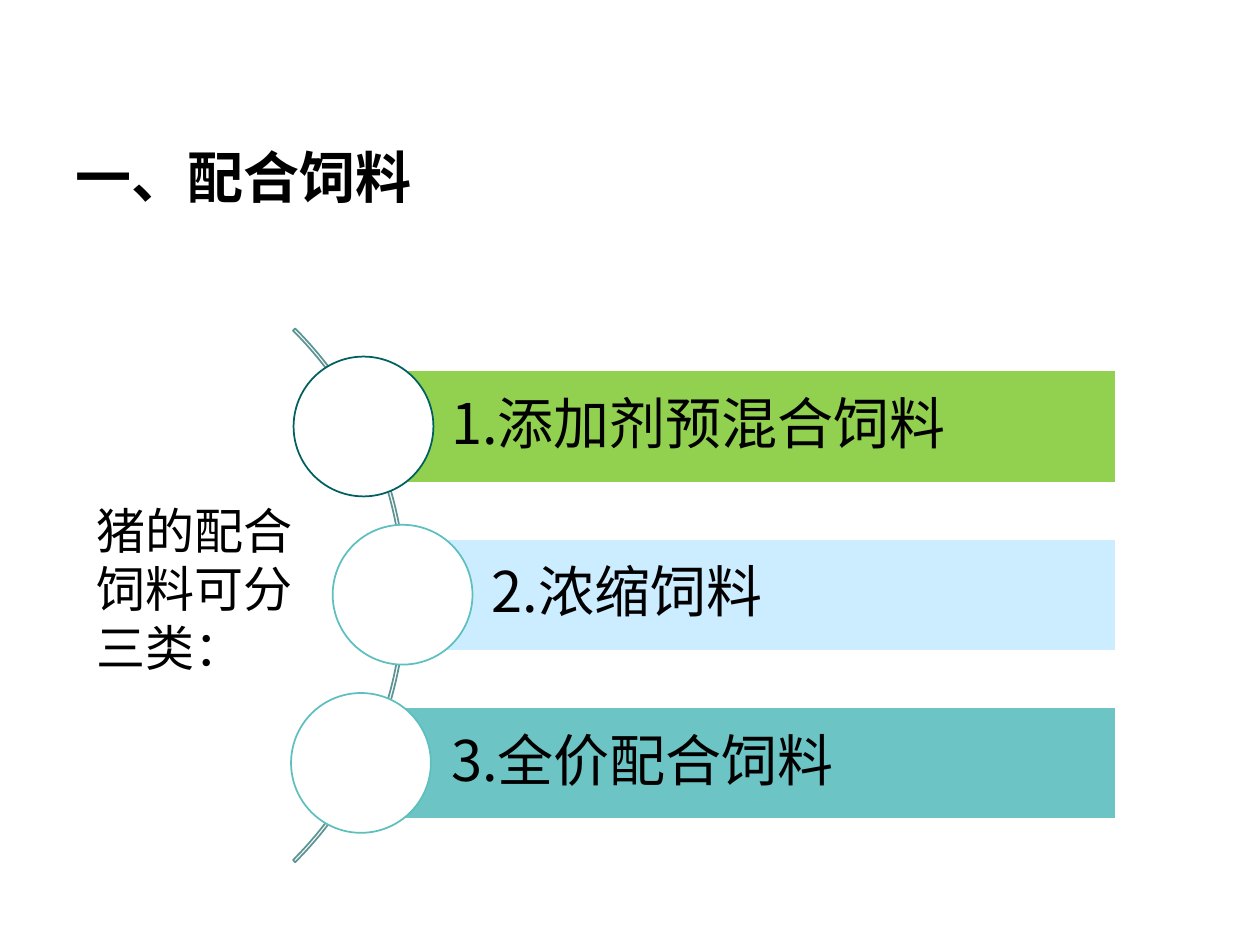
from lxml import etree
from pptx import Presentation
from pptx.dml.color import RGBColor
from pptx.enum.shapes import MSO_SHAPE
from pptx.enum.text import MSO_ANCHOR, MSO_AUTO_SIZE, PP_ALIGN
from pptx.oxml.ns import qn
from pptx.util import Inches, Pt

RECTANGLE, OVAL, BLOCK_ARC = MSO_SHAPE.RECTANGLE, MSO_SHAPE.OVAL, MSO_SHAPE.BLOCK_ARC
TOP, MIDDLE = MSO_ANCHOR.TOP, MSO_ANCHOR.MIDDLE
FIT_SHAPE, NO_FIT = MSO_AUTO_SIZE.SHAPE_TO_FIT_TEXT, MSO_AUTO_SIZE.NONE
LEFT = PP_ALIGN.LEFT

BLACK = RGBColor(0x00, 0x00, 0x00)
WHITE = RGBColor(0xFF, 0xFF, 0xFF)
GREEN = RGBColor(0x92, 0xD0, 0x50)
PALE_BLUE = RGBColor(0xCC, 0xEC, 0xFF)
TEAL = RGBColor(0x6C, 0xC4, 0xC4)
ARC_TEAL = RGBColor(0x5E, 0x94, 0x94)
DARK_TEAL = RGBColor(0x00, 0x5F, 0x5F)
RING_TEAL = RGBColor(0x5E, 0xBF, 0xBF)

FONT = "Noto Sans CJK SC"
BAR_TOP, BAR_STEP, BAR_HEIGHT, BAR_RIGHT = 2.94, 1.335, 0.89, 8.86
CIRCLE_SIZE = 1.11
FEEDS = [
    ("1.添加剂预混合饲料", 2.87, GREEN, 2.33, DARK_TEAL),
    ("2.浓缩饲料", 3.19, PALE_BLUE, 2.64, RING_TEAL),
    ("3.全价配合饲料", 2.87, TEAL, 2.31, RING_TEAL),
]


def set_values(target, values):
    """Set each named attribute of the target."""
    for name, value in values.items():
        setattr(target, name, value)


def write_text(box, text, size, frame_format, bold=False, line_spacing=1.0):
    """Write one left-aligned paragraph into a box."""
    frame = box.text_frame
    set_values(frame, frame_format)
    para = frame.paragraphs[0]
    set_values(para, {"alignment": LEFT, "line_spacing": line_spacing})
    span = para.add_run()
    span.text = text
    set_values(span.font, {"size": Pt(size), "bold": bold, "name": FONT})
    span.font.color.rgb = BLACK
    east_asian = etree.SubElement(span.font._element, qn("a:ea"))
    east_asian.set("typeface", FONT)


def add_shape(slide, kind, place, fill, line):
    """Add a flat preset shape with a thin outline."""
    shape = slide.shapes.add_shape(kind, *map(Inches, place))
    shape.shadow.inherit = False
    if fill is None:
        shape.fill.background()
    else:
        shape.fill.solid()
        shape.fill.fore_color.rgb = fill
    shape.line.color.rgb = line
    shape.line.width = Pt(1)
    return shape


def add_title(slide, text):
    """Place and fill the title placeholder."""
    title = slide.shapes.title
    place = {"left": 0.5, "top": 1.08, "width": 2.91, "height": 0.64}
    set_values(title, {name: Inches(value) for name, value in place.items()})
    frame_format = {"word_wrap": False, "auto_size": FIT_SHAPE, "vertical_anchor": TOP}
    write_text(title, text, 32, frame_format, bold=True)


def add_label(slide, text):
    """Add the wrapped text beside the arc."""
    box = slide.shapes.add_textbox(*map(Inches, (0.67, 3.92, 1.83, 1.51)))
    write_text(box, text, 28, {"word_wrap": True, "auto_size": FIT_SHAPE})


def add_arc(slide):
    """Add the thin arc that links the circles."""
    arc = add_shape(slide, BLOCK_ARC, (-2.77, 1.73, 5.99, 5.99), None, ARC_TEAL)
    for index, value in enumerate((189, 27, 0.004)):
        arc.adjustments[index] = value


def add_feed(slide, index, text, bar_left, bar_fill, circle_left, circle_line):
    """Add one feed bar with its circle."""
    top = BAR_TOP + index * BAR_STEP
    place = (bar_left, top, BAR_RIGHT - bar_left, BAR_HEIGHT)
    bar = add_shape(slide, RECTANGLE, place, bar_fill, WHITE)
    frame_format = {
        "word_wrap": True,
        "auto_size": NO_FIT,
        "vertical_anchor": MIDDLE,
        "margin_left": Inches(0.71),
        "margin_top": Inches(0.09),
        "margin_right": Inches(0.09),
        "margin_bottom": Inches(0.09),
    }
    write_text(bar, text, 32, frame_format, line_spacing=0.9)
    circle_top = top - (CIRCLE_SIZE - BAR_HEIGHT) / 2
    circle_place = (circle_left, circle_top, CIRCLE_SIZE, CIRCLE_SIZE)
    add_shape(slide, OVAL, circle_place, WHITE, circle_line)


def main():
    """Build the slide and save the deck."""
    deck = Presentation()
    set_values(deck, {"slide_width": Inches(10), "slide_height": Inches(7.5)})
    slide = deck.slides.add_slide(deck.slide_layouts[5])
    add_title(slide, "一、配合饲料")
    add_label(slide, "猪的配合饲料可分三类：")
    add_arc(slide)
    for index, feed in enumerate(FEEDS):
        add_feed(slide, index, *feed)
    deck.save("out.pptx")


if __name__ == "__main__":
    main()
